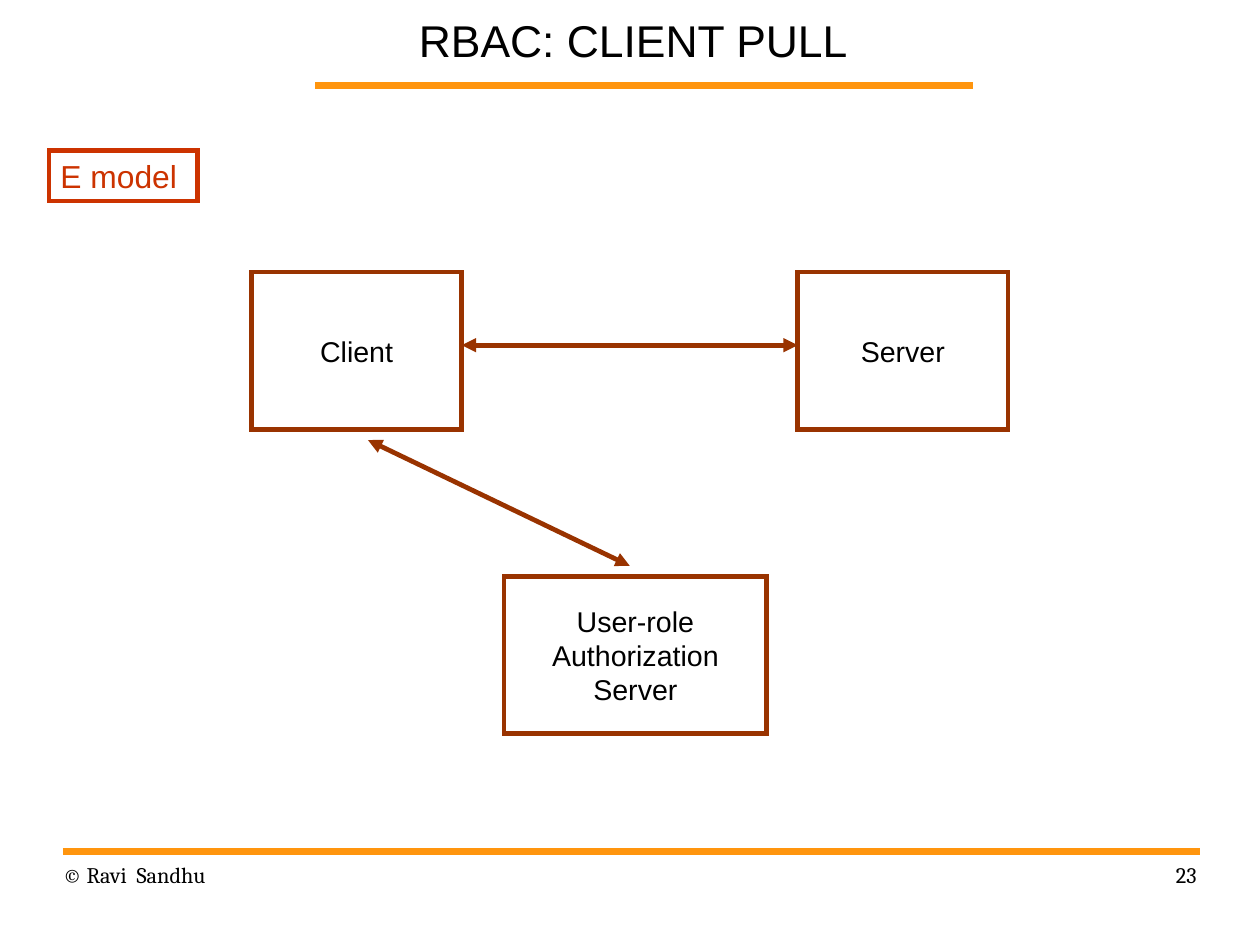
from pptx import Presentation
from pptx.util import Pt
from pptx.dml.color import RGBColor
from pptx.enum.shapes import MSO_CONNECTOR, MSO_SHAPE
from pptx.enum.text import MSO_ANCHOR, PP_ALIGN
from lxml import etree

RECT, STRAIGHT = MSO_SHAPE.RECTANGLE, MSO_CONNECTOR.STRAIGHT
TOP, MIDDLE, BOTTOM = MSO_ANCHOR.TOP, MSO_ANCHOR.MIDDLE, MSO_ANCHOR.BOTTOM
LEFT, CENTER, RIGHT = PP_ALIGN.LEFT, PP_ALIGN.CENTER, PP_ALIGN.RIGHT
NS = "{http://schemas.openxmlformats.org/drawingml/2006/main}"
PX = 9144  # 100 px to the inch
COLORS = {"orange": "FF950E", "red": "CC3300", "brown": "993300", "black": "000000"}

prs = Presentation()
prs.slide_width, prs.slide_height = 10080625, 7559675  # 28 by 21 cm page, in EMU
s = prs.slides.add_slide(prs.slide_layouts[6])


def add_text(sp, lines, size, color="black", font="Arial", align=LEFT,
             anchor=TOP, inset=(10, 5), wrap=True, spacing=None):
    tf = sp.text_frame
    tf.word_wrap = wrap
    tf.vertical_anchor = anchor
    tf.margin_left = tf.margin_right = inset[0] * PX
    tf.margin_top = tf.margin_bottom = inset[1] * PX
    for i, line in enumerate(lines):
        p = tf.add_paragraph() if i else tf.paragraphs[0]
        p.alignment = align
        p.line_spacing = spacing
        r = p.add_run()
        r.text = line
        r.font.size = Pt(size)
        r.font.name = font
        r.font.color.rgb = RGBColor.from_string(COLORS[color])


def add_line(x1, y1, x2, y2, color, width, arrows=False):
    c = s.shapes.add_connector(STRAIGHT, x1 * PX, y1 * PX, x2 * PX, y2 * PX)
    c.line.color.rgb = RGBColor.from_string(COLORS[color])
    c.line.width = Pt(width)
    if arrows:
        ln = c.line._get_or_add_ln()
        for end in ("headEnd", "tailEnd"):
            etree.SubElement(ln, NS + end, type="triangle")
    etree.SubElement(c._element.spPr, NS + "effectLst")


# Title and footer rules
add_line(276, 75, 851, 75, "orange", 4.31)
add_line(55, 745, 1050, 745, "orange", 4.31)

# Title
title = s.shapes.add_textbox(306 * PX, 0, 496 * PX, 63 * PX)
add_text(title, ["RBAC: CLIENT PULL"], 28, align=CENTER, anchor=BOTTOM, inset=(11, 5))

# Footer
for x, text, align in [(55, "© Ravi  Sandhu", LEFT), (790, "23", RIGHT)]:
    footer = s.shapes.add_textbox(x * PX, 753 * PX, 257 * PX, 57 * PX)
    add_text(footer, [text], 14, font="Cambria", align=align, inset=(0, 0), spacing=1.01)

# Model label and the three parties
node = dict(size=18, align=CENTER, anchor=MIDDLE, inset=(11, 6), wrap=False)
boxes = [
    (43, 132, 130, 44, "red", ["E model"], dict(size=20, color="red")),
    (220, 238, 184, 138, "brown", ["Client"], node),
    (698, 238, 184, 138, "brown", ["Server"], node),
    (441, 504, 230, 138, "brown", ["User-role", "Authorization", "Server"], node),
]
for x, y, w, h, color, lines, style in boxes:
    sp = s.shapes.add_shape(RECT, x * PX, y * PX, w * PX, h * PX)
    sp.shadow.inherit = False
    sp.fill.background()
    sp.line.color.rgb = RGBColor.from_string(COLORS[color])
    sp.line.width = Pt(3)
    etree.SubElement(sp.line._get_or_add_ln(), NS + "miter", lim="800000")
    add_text(sp, lines, **style)

# Two-way arrows from the client
add_line(404, 302, 698, 302, "brown", 3, arrows=True)
add_line(551, 495, 322, 385, "brown", 3, arrows=True)

prs.save("out.pptx")
